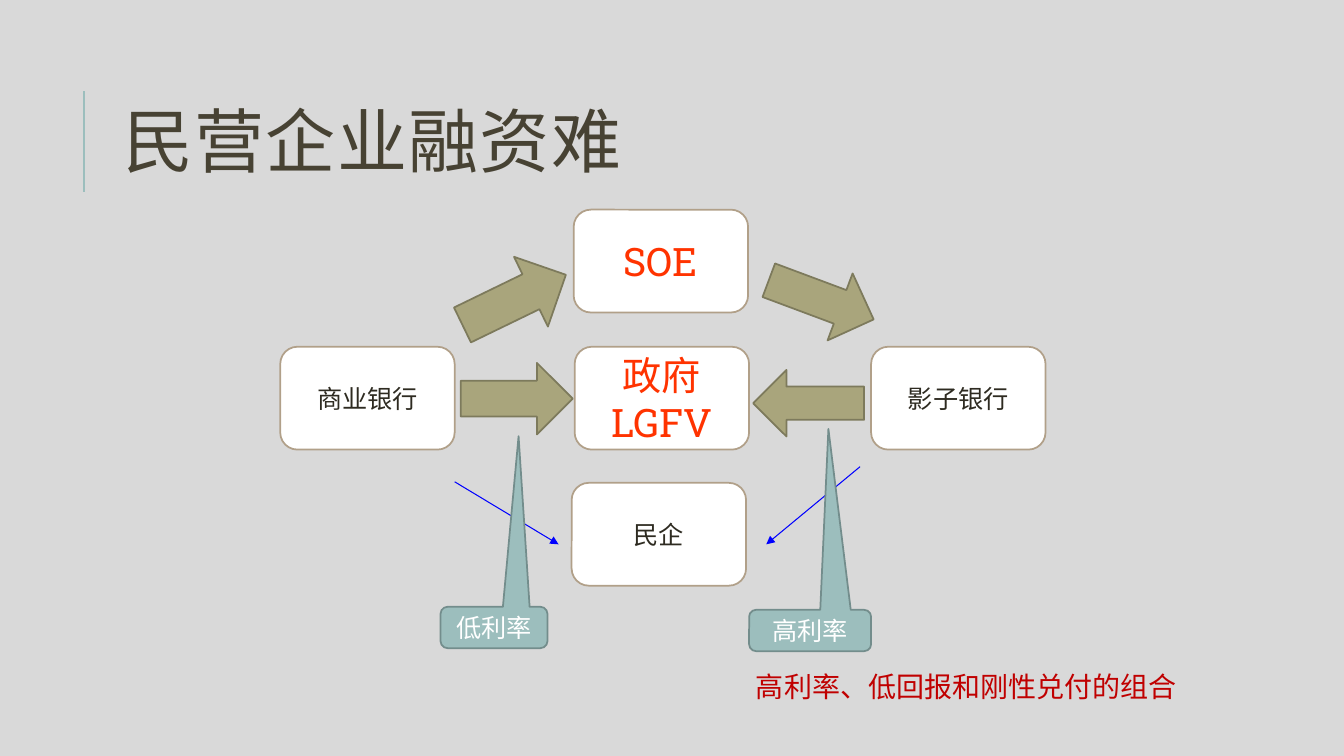
from lxml import etree
from pptx import Presentation
from pptx import util as u
from pptx.dml.color import RGBColor
from pptx.enum import shapes, text
from pptx.oxml.ns import qn

PX = 9144  # 100 px to the inch

GREY = RGBColor(0xD9, 0xD9, 0xD9)
WHITE = RGBColor(0xFF, 0xFF, 0xFF)
BROWN = RGBColor(0x47, 0x42, 0x33)
INK = RGBColor(0x2E, 0x2B, 0x21)
TAN = RGBColor(0xB1, 0xA0, 0x89)
ORANGE = RGBColor(0xFF, 0x33, 0x00)
OLIVE = RGBColor(0xA9, 0xA5, 0x7C)
MOSS = RGBColor(0x7D, 0x7A, 0x5C)
TEAL = RGBColor(0x9C, 0xBE, 0xBD)
PINE = RGBColor(0x73, 0x8D, 0x8C)
BLUE = RGBColor(0x00, 0x00, 0xFF)
RED = RGBColor(0xC0, 0x00, 0x00)

KIND = shapes.MSO_SHAPE
LEFT, MID = text.PP_ALIGN.LEFT, text.PP_ALIGN.CENTER
SLAB = "Roboto Slab"


def emu(*vals):
    return [u.Emu(v * PX) for v in vals]


def write(shape, words, size, color, font=SLAB, align=MID, **more):
    frame = shape.text_frame
    frame.text = words
    frame.word_wrap = True
    frame.vertical_anchor = text.MSO_ANCHOR.MIDDLE
    for par in frame.paragraphs:
        for key, val in {"alignment": align, **more}.items():
            setattr(par, key, val)
        for run in par.runs:
            for key, val in {"size": u.Pt(size), "name": font}.items():
                setattr(run.font, key, val)
            run.font.color.rgb = color


def draw(slide, kind, box, fill, edge):
    shape = slide.shapes.add_shape(kind, *emu(*box))
    shape.shadow.inherit = False
    shape.fill.solid()
    shape.fill.fore_color.rgb = fill
    shape.line.color.rgb = edge
    shape.line.width = u.Pt(1.25)
    return shape


def link(slide, ends, color, width, head=False):
    line = slide.shapes.add_connector(shapes.MSO_CONNECTOR.STRAIGHT, *emu(*ends))
    line.line.color.rgb = color
    line.line.width = u.Pt(width)
    if head:
        etree.SubElement(line.line._get_or_add_ln(), qn("a:tailEnd"), type="triangle")
    etree.SubElement(line._element.spPr, qn("a:effectLst"))


def heading(slide, x, y, w, h):
    """Title with an upright rule at its left."""
    link(slide, (x - 29, y + 126, x - 29, y + 26), TEAL, 1.5)
    title = slide.shapes.title
    for key, val in zip(("left", "top", "width", "height"), emu(x, y, w, h)):
        setattr(title, key, val)
    write(title, "民营企业融资难", 50, BROWN, "Cabin", LEFT, line_spacing=0.8)
    title.text_frame.auto_size = text.MSO_AUTO_SIZE.NONE
    for run in title.text_frame.paragraphs[0].runs:
        run.font._element.set("spc", "100")


def nodes(slide, x, y):
    for dx, dy, words, size, color in (
        (0, 136, "商业银行", 18, INK),
        (291, 0, "SOE", 28, ORANGE),
        (289, 271, "民企", 18, INK),
        (586, 136, "影子银行", 18, INK),
        (292, 136, "政府\nLGFV", 28, ORANGE),
    ):
        node = draw(slide, KIND.ROUNDED_RECTANGLE, (x + dx, y + dy, 173, 102), WHITE, TAN)
        write(node, words, size, color)


def flows(slide, x, y):
    """Block arrows for the main flows, thin ones for the weak flows."""
    for dx, dy, w, h, turn in (
        (175, 51, 114, 77, 334.1),
        (179, 152, 111, 71, 0),
        (481, 54, 111, 71, 20.5),
        (469, 159, 110, 66, 180),
    ):
        arrow = draw(slide, KIND.RIGHT_ARROW, (x + dx, y + dy, w, h), OLIVE, MOSS)
        arrow.rotation = turn
    for x1, y1, x2, y2 in ((173, 270, 276, 332), (575, 255, 482, 332)):
        link(slide, (x + x1, y + y1, x + x2, y + y2), BLUE, 0.75, True)


def rates(slide, x, y):
    for dx, dy, w, words, tip in (
        (159, 394, 106, "低利率", (0.23, -4.63)),
        (465, 397, 121, "高利率", (0.15, -4.88)),
    ):
        box = x + dx, y + dy, w, 41
        call = draw(slide, KIND.ROUNDED_RECTANGULAR_CALLOUT, box, TEAL, PINE)
        call.adjustments[0], call.adjustments[1] = tip
        write(call, words, 18, WHITE)


def remark(slide, *box):
    note = slide.shapes.add_textbox(*emu(*box))
    write(note, "高利率、低回报和刚性兑付的组合", 20, RED, "Calibri", LEFT)


def main():
    deck = Presentation()
    deck.slide_width, deck.slide_height = emu(1333, 750)
    slide = deck.slides.add_slide(deck.slide_layouts[5])
    slide.background.fill.solid()
    slide.background.fill.fore_color.rgb = GREY
    heading(slide, 112, 64, 1063, 164)
    for part in (nodes, flows, rates):
        part(slide, 278, 208)
    remark(slide, 740, 659, 453, 44)
    deck.save("out.pptx")


if __name__ == "__main__":
    main()
